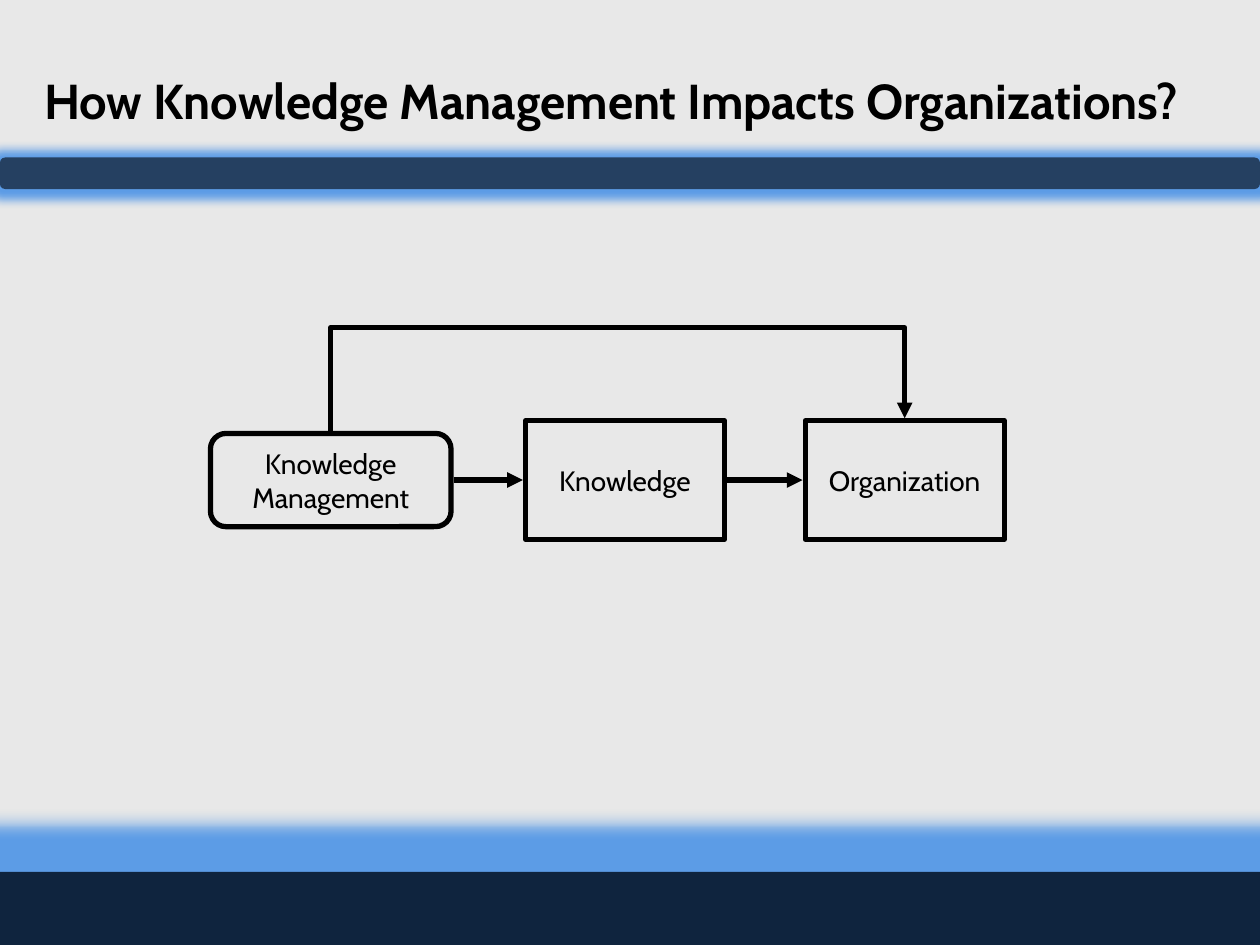
from pptx import Presentation, util as u
from pptx.dml.color import RGBColor
from pptx.enum import shapes, text
from pptx.oxml import parse_xml
from pptx.oxml.ns import nsdecls

THEME = {
    "font": "Cabin", "title": 28, "label": 16, "line": 3,
    "ink": "000000", "page": "E8E8E8", "glow": "5C9CE6",
}
TITLE = "How Knowledge Management Impacts Organizations?"
RECT = shapes.MSO_SHAPE.RECTANGLE
ROUND = shapes.MSO_SHAPE.ROUNDED_RECTANGLE

# Bands: shape, top, height, colour, glow radius in points
BANDS = [
    (RECT, 6.92, 0.58, "0F243E", 18),
    (ROUND, 1.25, 0.25, "254061", 11),
]
# Flow: label, shape, left, width, height; all centred on one axis
AXIS = 3.81
FLOW = [
    ("Knowledge Management", ROUND, 1.67, 1.91, 0.74),
    ("Knowledge", RECT, 4.17, 1.58, 0.94),
    ("Organization", RECT, 6.39, 1.58, 0.94),
]
GAP = 0.02        # space between a box edge and an arrow
BYPASS_TOP = 2.6  # height of the arrow that skips the middle box


def colour(name):
    return RGBColor.from_string(THEME.get(name, name))


def write(frame, words, size, align, bold=False):
    frame.word_wrap = True
    frame.vertical_anchor = text.MSO_ANCHOR.MIDDLE
    para = frame.paragraphs[0]
    para.alignment = align
    span = para.add_run()
    span.text = words
    span.font.name = THEME["font"]
    span.font.size = u.Pt(THEME[size])
    span.font.bold = bold
    span.font.color.rgb = colour("ink")


def add_band(page, width, kind, top, height, fill, radius):
    band = page.shapes.add_shape(kind, 0, u.Inches(top), width, u.Inches(height))
    band.fill.solid()
    band.fill.fore_color.rgb = colour(fill)
    band.line.fill.background()
    band.shadow.inherit = False
    effects = band._element.spPr.find("{*}effectLst")
    effects.append(parse_xml(
        f'<a:glow {nsdecls("a")} rad="{u.Pt(radius)}">'
        f'<a:srgbClr val="{THEME["glow"]}"/></a:glow>'))


def add_box(page, label, kind, left, width, height):
    box = page.shapes.add_shape(kind, *map(u.Inches, (left, AXIS - height / 2, width, height)))
    box.fill.background()
    box.line.color.rgb = colour("ink")
    box.line.width = u.Pt(THEME["line"])
    box.shadow.inherit = False
    write(box.text_frame, label, "label", text.PP_ALIGN.CENTER)


def add_arrow(page, kind, start, end):
    arrow = page.shapes.add_connector(kind, *map(u.Inches, (*start, *end)))
    arrow.line.color.rgb = colour("ink")
    arrow.line.width = u.Pt(THEME["line"])
    arrow.line._get_or_add_ln().append(
        parse_xml(f'<a:tailEnd {nsdecls("a")} type="triangle"/>'))
    arrow._element.spPr.append(parse_xml(f'<a:effectLst {nsdecls("a")}/>'))
    return arrow


def add_bypass(page, start, end):
    """Elbow arrow turned a quarter, so that it leaves and arrives vertically."""
    (x1, y1), (x2, y2) = start, end
    rise, run = y1 - y2, x2 - x1
    left, top = (x1 + x2 - rise) / 2, (y1 + y2 - run) / 2
    arrow = add_arrow(page, shapes.MSO_CONNECTOR.ELBOW,
                      (left, top), (left + rise, top + run))
    arrow._element.spPr.xfrm.set("rot", str(270 * 60000))
    bend = round((y1 - BYPASS_TOP) / rise * 100000)
    guides = arrow._element.spPr.prstGeom.get_or_add_avLst()
    guides.append(parse_xml(f'<a:gd {nsdecls("a")} name="adj1" fmla="val {bend}"/>'))


def main():
    deck = Presentation()
    deck.slide_width, deck.slide_height = u.Inches(10), u.Inches(7.5)
    page = deck.slides.add_slide(deck.slide_layouts[5])
    page.background.fill.solid()
    page.background.fill.fore_color.rgb = colour("page")

    # Bands and title
    for band in BANDS:
        add_band(page, deck.slide_width, *band)
    title = page.shapes.title
    title.left, title.top, title.width, title.height = map(
        u.Inches, (0.25, 0.42, 9.33, 0.75))
    write(title.text_frame, TITLE, "title", text.PP_ALIGN.LEFT, bold=True)

    # Boxes and the arrows between neighbours
    for step in FLOW:
        add_box(page, *step)
    for (_, _, left, width, _), (_, _, target, _, _) in zip(FLOW, FLOW[1:]):
        add_arrow(page, shapes.MSO_CONNECTOR.STRAIGHT,
                  (left + width + GAP, AXIS), (target - GAP, AXIS))

    # Bypass from the top of the first box to the top of the last
    start, end = ((left + width / 2, AXIS - height / 2 - GAP)
                  for _, _, left, width, height in (FLOW[0], FLOW[-1]))
    add_bypass(page, start, end)
    deck.save("out.pptx")


if __name__ == "__main__":
    main()
